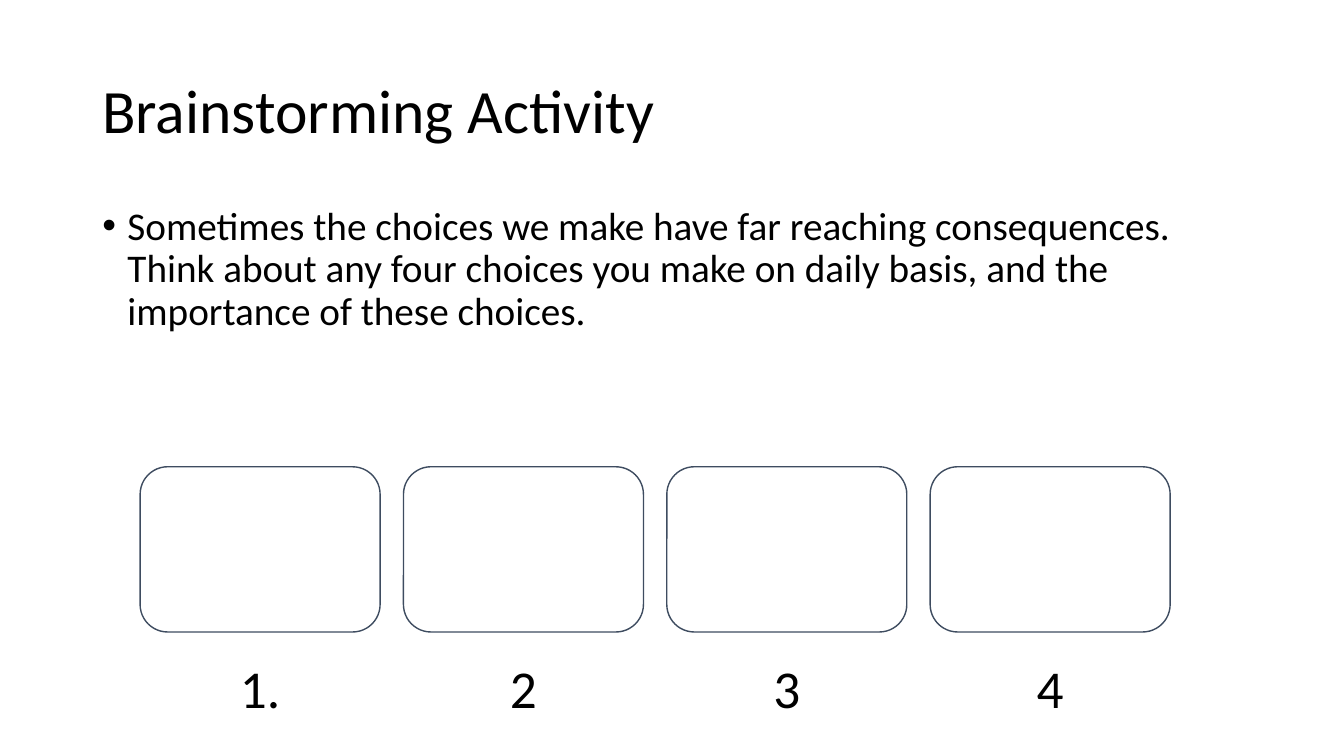
from lxml import etree
from pptx import Presentation
from pptx.dml.color import RGBColor
from pptx.enum.shapes import MSO_SHAPE
from pptx.enum.text import MSO_ANCHOR, PP_ALIGN
from pptx.oxml.ns import qn
from pptx.util import Pt

ROUNDED = MSO_SHAPE.ROUNDED_RECTANGLE
TOP, MIDDLE = MSO_ANCHOR.TOP, MSO_ANCHOR.MIDDLE
LEFT, CENTER = PP_ALIGN.LEFT, PP_ALIGN.CENTER

MARGIN, TEXT_WIDTH = 66, 828
CARD_LEFT, CARD_TOP, CARD_PITCH = 100.1, 333.4, 188.1
CARD_WIDTH, CARD_HEIGHT = 171.4, 118
LABEL_HEIGHT, LABEL_INSET = 63.4, 21.6
BULLET_INDENT = 18

TITLE = "Brainstorming Activity"
PROMPT = (
    "Sometimes the choices we make have far reaching consequences. "
    "Think about any four choices you make on daily basis, "
    "and the importance of these choices."
)
LABELS = ["1.", "2", "3", "4"]


def color(value):
    return RGBColor.from_string(value)


def apply(target, values):
    for name, value in values.items():
        setattr(target, name, value)


def add_text(page, text, area, size, anchor=TOP, align=LEFT, margins=None):
    box = page.shapes.add_textbox(*map(Pt, area))
    frame = box.text_frame
    apply(frame, {"word_wrap": True, "vertical_anchor": anchor, **(margins or {})})
    para = frame.paragraphs[0]
    apply(para, {"alignment": align, "line_spacing": 0.9})
    span = para.add_run()
    span.text = text
    apply(span.font, {"name": "Calibri", "size": Pt(size)})
    span.font.color.rgb = color("000000")
    return para


def add_bullet(para):
    properties = para._p.get_or_add_pPr()
    properties.set("marL", str(Pt(BULLET_INDENT)))
    properties.set("indent", str(-Pt(BULLET_INDENT)))
    etree.SubElement(properties, qn("a:buFont")).set("typeface", "Arial")
    etree.SubElement(properties, qn("a:buChar")).set("char", "•")


def add_card(page, left, label):
    area = (left, CARD_TOP, CARD_WIDTH, CARD_HEIGHT)
    card = page.shapes.add_shape(ROUNDED, *map(Pt, area))
    card.shadow.inherit = False
    card.fill.solid()
    card.fill.fore_color.rgb = color("FFFFFF")
    card.line.color.rgb = color("3E4C60")
    card.line.width = Pt(1)
    margins = {f"margin_{side}": Pt(LABEL_INSET) for side in ("left", "top", "right")}
    margins["margin_bottom"] = 0
    label_area = (left, CARD_TOP + CARD_HEIGHT, CARD_WIDTH, LABEL_HEIGHT)
    add_text(page, label, label_area, 38, align=CENTER, margins=margins)


def main():
    deck = Presentation()
    apply(deck, {"slide_width": Pt(960), "slide_height": Pt(540)})
    page = deck.slides.add_slide(deck.slide_layouts[6])
    add_text(page, TITLE, (MARGIN, 28.8, TEXT_WIDTH, 104.4), 44, anchor=MIDDLE)
    add_bullet(add_text(page, PROMPT, (MARGIN, 144, TEXT_WIDTH, 342.6), 28))
    for index, label in enumerate(LABELS):
        add_card(page, CARD_LEFT + index * CARD_PITCH, label)
    deck.save("out.pptx")


if __name__ == "__main__":
    main()
